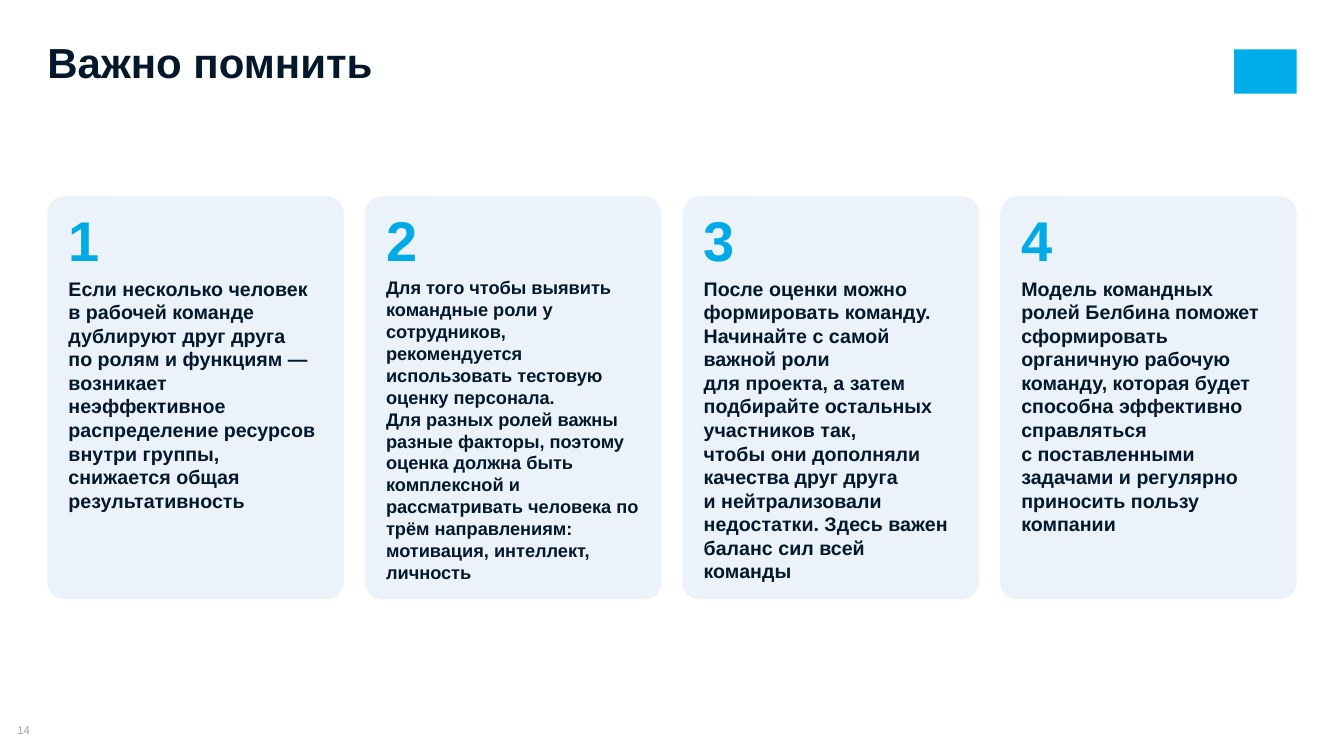
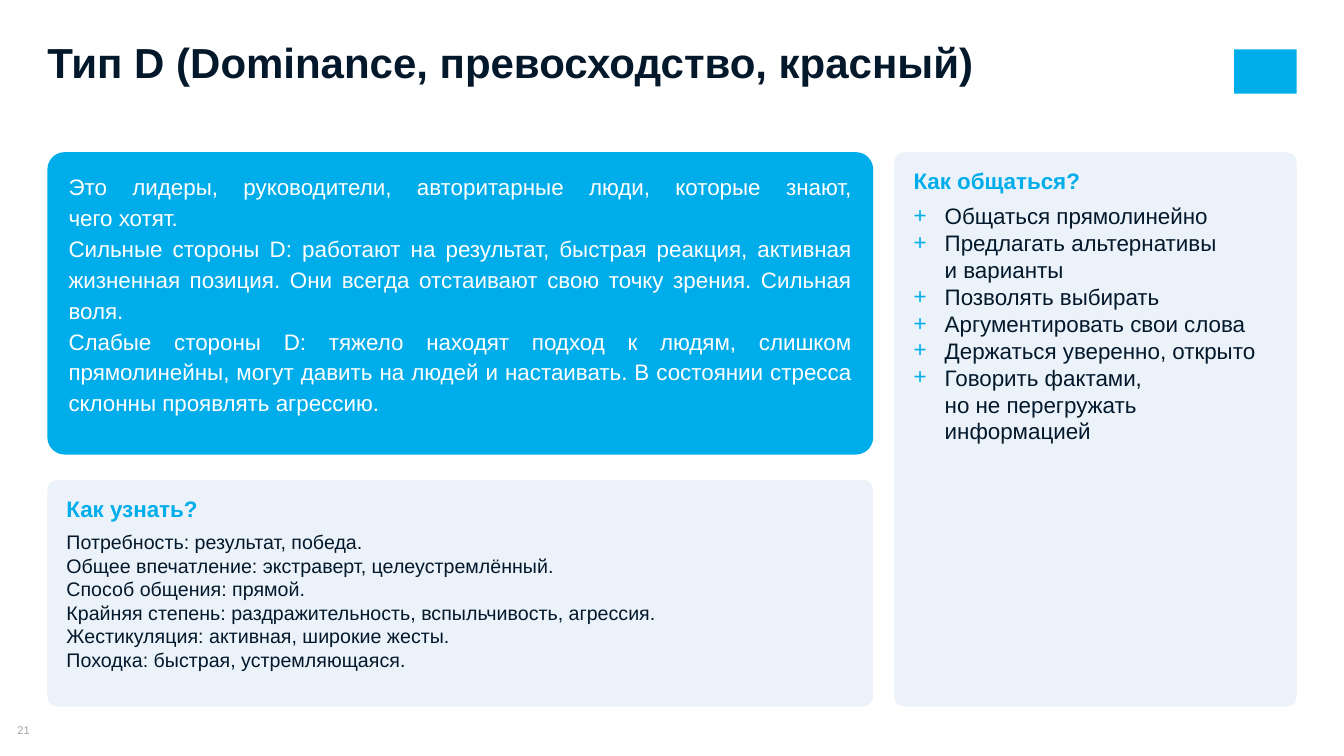
from copy import deepcopy
from dataclasses import dataclass

from pptx import Presentation, slide as sl, util as u
from pptx.dml.color import RGBColor
from pptx.enum import shapes, text
from pptx.oxml.ns import qn
from lxml import etree

# Shared style
FONT = "Arial"
COLORS = {"ink": "03182B", "accent": "00ADEB", "number": "00AAE6",
          "panel": "EBF2FA", "white": "FFFFFF", "gray": "A6A6A6"}
SLIDE_W, SLIDE_H = 13.33, 7.5

# Grid: 12 columns across, rows of a quarter inch down
LEFT, TOP = 0.47, 1.51
COL, GUTTER, ROW = 0.84, 0.21, 0.25
PAD = 0.16
CORNER = 0.17
SMALL_CORNER = 0.1


@dataclass
class Area:
    col: int
    row: float
    cols: int
    rows: float

    def box(self) -> tuple[float, float, float, float]:
        return (LEFT + self.col * (COL + GUTTER), TOP + self.row * ROW,
                self.cols * (COL + GUTTER) - GUTTER, self.rows * ROW)


@dataclass
class Card:
    body: str
    size: int = 14


# Content
CARDS = [
    Card("Если несколько человек\nв рабочей команде дублируют друг друга\n"
         "по ролям и функциям — возникает неэффективное распределение ресурсов "
         "внутри группы, снижается общая результативность"),
    Card("Для того чтобы выявить командные роли у сотрудников, рекомендуется "
         "использовать тестовую оценку персонала.\nДля разных ролей важны разные "
         "факторы, поэтому оценка должна быть комплексной и рассматривать "
         "человека по трём направлениям: мотивация, интеллект, личность", 13),
    Card("После оценки можно формировать команду. Начинайте с самой важной роли\n"
         "для проекта, а затем подбирайте остальных участников так,\n"
         "чтобы они дополняли качества друг друга\n"
         "и нейтрализовали недостатки. Здесь важен баланс сил всей команды"),
    Card("Модель командных ролей Белбина поможет сформировать органичную рабочую "
         "команду, которая будет способна эффективно справляться\n"
         "с поставленными задачами и регулярно приносить пользу компании"),
]
PORTRAIT = [
    "Это лидеры, руководители, авторитарные люди, которые знают,\nчего хотят.",
    "Сильные стороны D: работают на результат, быстрая реакция, активная "
    "жизненная позиция. Они всегда отстаивают свою точку зрения. Сильная воля.",
    "Слабые стороны D: тяжело находят подход к людям, слишком прямолинейны, "
    "могут давить на людей и настаивать. В состоянии стресса склонны проявлять "
    "агрессию.",
]
SIGNS = [
    "Потребность: результат, победа.",
    "Общее впечатление: экстраверт, целеустремлённый.",
    "Способ общения: прямой.",
    "Крайняя степень: раздражительность, вспыльчивость, агрессия.",
    "Жестикуляция: активная, широкие жесты.",
    "Походка: быстрая, устремляющаяся.",
]
ADVICE = [
    "Общаться прямолинейно",
    "Предлагать альтернативы\nи варианты",
    "Позволять выбирать",
    "Аргументировать свои слова",
    "Держаться уверенно, открыто",
    "Говорить фактами,\nно не перегружать информацией",
]


# Drawing helpers
def rgb(name: str) -> RGBColor:
    return RGBColor.from_string(COLORS[name])


def inches(*lengths: float) -> list[u.Length]:
    return [u.Inches(n) for n in lengths]


def frame(sp, insets=(0, 0, 0, 0), anchor=text.MSO_ANCHOR.TOP):
    tf = sp.text_frame
    tf.word_wrap = True
    tf.auto_size = text.MSO_AUTO_SIZE.NONE
    tf.vertical_anchor = anchor
    (tf.margin_left, tf.margin_top,
     tf.margin_right, tf.margin_bottom) = inches(*insets)
    return tf


def write(tf, words: str, *, size: float = 14, color: str = "ink",
          bold: bool = False, after: float = 0, spacing: float = 1.0,
          align=text.PP_ALIGN.LEFT, bullet: str = "") -> None:
    """Add a formatted paragraph, using the empty first one if there is one."""
    p = tf.paragraphs[0] if not tf.text else tf.add_paragraph()
    p.text = words
    p.alignment, p.line_spacing = align, spacing
    p.space_before, p.space_after = u.Pt(0), u.Pt(after)
    for r in p.runs:
        r.font.name, r.font.size, r.font.bold = FONT, u.Pt(size), bold
        r.font.color.rgb = rgb(color)
    for br in p._p.findall(qn("a:br")):
        br.append(deepcopy(p.runs[0].font._element))
    set_bullet(p, bullet)


def set_bullet(p, bullet: str) -> None:
    pPr = p._p.get_or_add_pPr()
    indent = u.Inches(0.31) if bullet else 0
    pPr.set("marL", str(int(indent)))
    pPr.set("indent", str(-int(indent)))
    if not bullet:
        etree.SubElement(pPr, qn("a:buNone"))
        return
    clr = etree.SubElement(pPr, qn("a:buClr"))
    etree.SubElement(clr, qn("a:srgbClr"), val=COLORS["accent"])
    etree.SubElement(pPr, qn("a:buFont"), typeface=FONT)
    etree.SubElement(pPr, qn("a:buChar"), char=bullet)


def add_block(s: sl.Slide, kind, box, fill: str):
    sp = s.shapes.add_shape(kind, *inches(*box))
    sp.shadow.inherit = False
    sp.fill.solid()
    sp.fill.fore_color.rgb = rgb(fill)
    sp.line.fill.background()
    return sp


def add_panel(s: sl.Slide, area: Area, fill: str = "panel",
              corner: float = SMALL_CORNER, inset_top: float = 0.12):
    box = area.box()
    sp = add_block(s, shapes.MSO_SHAPE.ROUNDED_RECTANGLE, box, fill)
    sp.adjustments[0] = corner / min(box[2:])
    return frame(sp, (PAD, inset_top, PAD, PAD))


def place(sp, box) -> None:
    sp.left, sp.top, sp.width, sp.height = inches(*box)


def add_slide(prs, layout: int, title: str, number: int) -> sl.Slide:
    """Start a slide with the shared title, corner mark and page number."""
    s = prs.slides.add_slide(prs.slide_layouts[layout])
    place(s.shapes.title, (LEFT, 0.46, 10.51, 0.4))
    write(frame(s.shapes.title), title, size=30, bold=True, spacing=0.8)
    add_block(s, shapes.MSO_SHAPE.RECTANGLE, (12.24, 0.49, 0.62, 0.44), "accent")
    page = s.shapes.add_textbox(*inches(0, 7.18, LEFT, 0.13))
    write(frame(page, anchor=text.MSO_ANCHOR.MIDDLE), str(number), size=8,
          color="gray", align=text.PP_ALIGN.CENTER)
    return s


# Slides
def reminders_slide(prs) -> None:
    s = add_slide(prs, 5, "Важно помнить", 14)
    for i, card in enumerate(CARDS):
        tf = add_panel(s, Area(3 * i, 1.75, 3, 16), corner=CORNER, inset_top=0.04)
        write(tf, str(i + 1), size=40, color="number", bold=True, after=3)
        write(tf, card.body, size=card.size, bold=True, after=6)


def dominance_slide(prs) -> None:
    s = add_slide(prs, 1, "Тип D (Dominance, превосходство, красный)", 21)
    heading = dict(size=16, color="accent", bold=True, after=6)

    # Portrait
    tf = add_panel(s, Area(0, 0, 8, 12), "accent", CORNER)
    for line in PORTRAIT:
        write(tf, line, size=16, color="white", spacing=1.15,
              align=text.PP_ALIGN.JUSTIFY)

    # Signs
    tf = add_panel(s, Area(0, 13, 8, 9))
    write(tf, "Как узнать?", **heading)
    for line in SIGNS:
        write(tf, line)

    # Advice list in the body placeholder, over its panel
    side = Area(8, 0, 4, 22)
    add_panel(s, side)
    body = s.placeholders[1]
    place(body, side.box())
    s.shapes._spTree.append(body._element)
    tf = frame(body, (0.19, 0.15, 0.19, 0.19))
    write(tf, "Как общаться?", **heading)
    for line in ADVICE:
        write(tf, line, size=16, bullet="+")


def main() -> None:
    prs = Presentation()
    prs.slide_width, prs.slide_height = inches(SLIDE_W, SLIDE_H)
    reminders_slide(prs)
    dominance_slide(prs)
    prs.save("out.pptx")


if __name__ == "__main__":
    main()
